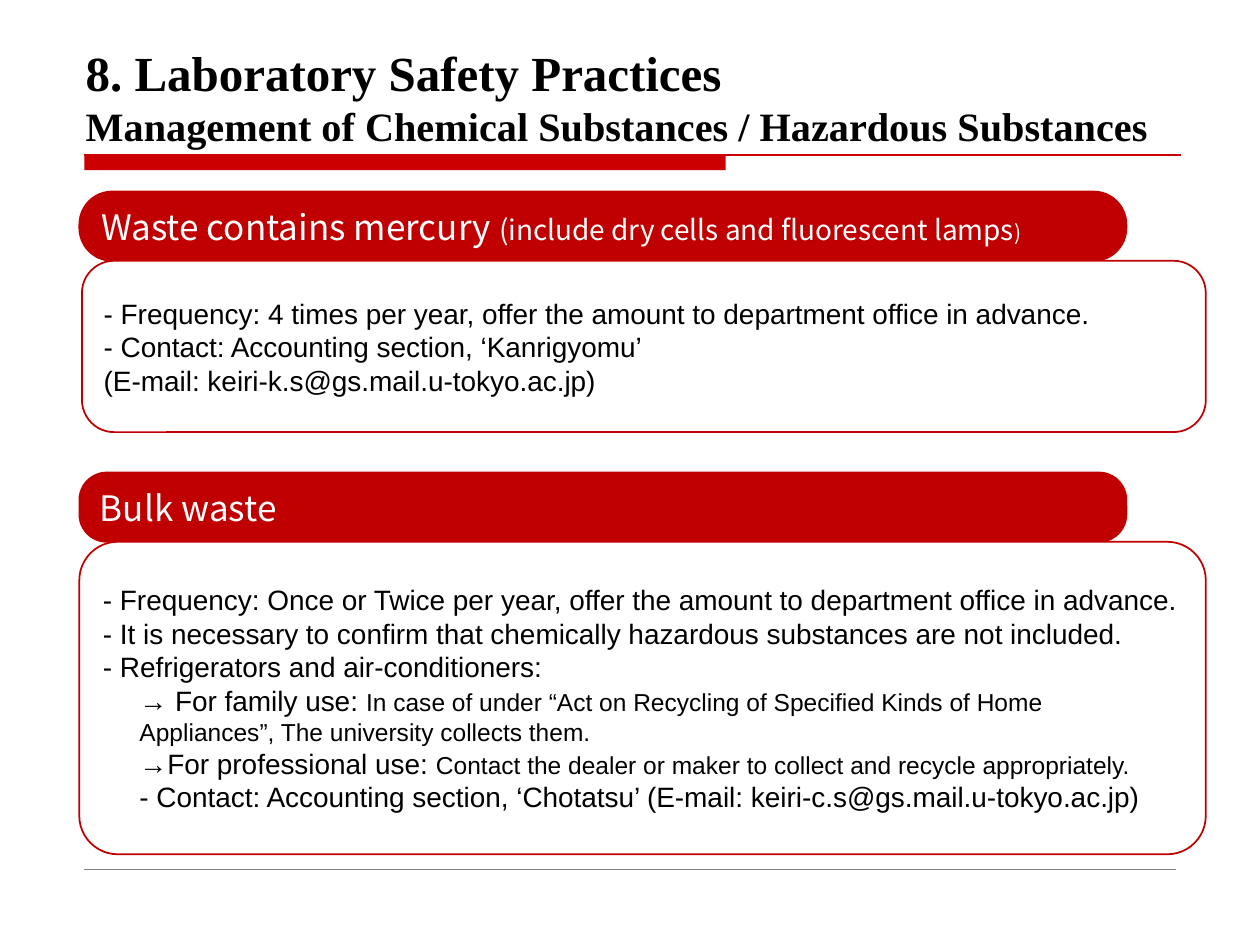
"""Build the slide on mercury waste and bulk waste rules."""
import copy
from dataclasses import dataclass

from lxml import etree
from pptx import Presentation
from pptx import util as u
from pptx.dml.color import RGBColor
from pptx.enum import shapes, text
from pptx.oxml.ns import qn


@dataclass(frozen=True)
class Theme:
    rule: str = "CC0000"
    accent: str = "C00000"
    paper: str = "FFFFFF"
    ink: str = "000000"
    footer: str = "808080"
    title_font: str = "Times New Roman"
    head_font: str = "Noto Sans CJK JP"
    body_font: str = "Arial"
    title: int = 28
    subtitle: int = 23
    head: int = 20
    body: int = 16
    detail: int = 14
    small: int = 12


THEME = Theme()
LEFT, HEAD_WIDTH, HEAD_HEIGHT, RIGHT = 0.63, 8.31, 0.55, 9.57
INDENT = 0.29

TITLE = [(0, [("8. Laboratory Safety Practices\v", THEME.title),
              ("Management of Chemical Substances / Hazardous Substances", THEME.subtitle)])]

SECTIONS = [
    {
        "top": 1.52, "left": 0.65, "height": 1.36, "rounding": (0.473, 0.188),
        "head": [("Waste contains mercury ", THEME.head),
                 ("(include dry cells and fluorescent lamps", THEME.body),
                 (")", THEME.small)],
        "body": [
            (0, [("- Frequency: 4 times per year, offer the amount to department office in advance.", THEME.body)]),
            (0, [("- Contact: Accounting section, ‘Kanrigyomu’ \v(E-mail: keiri-k.s@gs.mail.u-tokyo.ac.jp)", THEME.body)]),
        ],
    },
    {
        "top": 3.75, "left": LEFT, "height": 2.48, "rounding": (0.396, 0.123),
        "head": [("Bulk waste", THEME.head)],
        "body": [
            (0, [("- Frequency: Once or Twice per year, offer the amount to department office in advance.", THEME.body)]),
            (0, [("- It is necessary to confirm that chemically hazardous substances are not included.", THEME.body)]),
            (0, [("- Refrigerators and air-conditioners:", THEME.body)]),
            (1, [("→ For family use: ", THEME.body),
                 ("In case of under “Act on Recycling of Specified Kinds of Home Appliances”, "
                  "The university collects them.", THEME.detail)]),
            (1, [("→For professional use: ", THEME.body),
                 ("Contact the dealer or maker to collect and recycle appropriately.", THEME.detail)]),
            (1, [("- Contact: Accounting section, ‘Chotatsu’ (E-mail: keiri-c.s@gs.mail.u-tokyo.ac.jp)", THEME.body)]),
        ],
    },
]


def color(code):
    return RGBColor.from_string(code)


def add_span(para, words, size, font, ink, bold):
    for number, part in enumerate(words.split("\v")):
        if number:
            para.add_line_break()
        if not part:
            continue
        span = para.add_run()
        span.text = part
        span.font.size = u.Pt(size)
        span.font.name = font
        span.font.bold = bold
        span.font.color.rgb = color(ink)


def write(frame, paragraphs, font, ink, anchor, bold=False):
    frame.word_wrap = True
    frame.auto_size = text.MSO_AUTO_SIZE.NONE
    frame.vertical_anchor = anchor
    for number, (level, spans) in enumerate(paragraphs):
        para = frame.add_paragraph() if number else frame.paragraphs[0]
        para.alignment = text.PP_ALIGN.LEFT
        if level:
            para._p.get_or_add_pPr().set("marL", str(u.Inches(INDENT * level)))
        for words, size in spans:
            add_span(para, words, size, font, ink, bold)
        for line_break in para._p.findall(qn("a:br")):
            line_break.append(copy.deepcopy(line_break.getprevious().find(qn("a:rPr"))))


def add_box(page, kind, place, fill, line, rounding=None):
    box = page.shapes.add_shape(kind, *map(u.Inches, place))
    box.shadow.inherit = False
    box.fill.solid()
    box.fill.fore_color.rgb = color(fill)
    if line:
        box.line.color.rgb = color(line)
        box.line.width = u.Pt(1)
    else:
        box.line.fill.background()
    if rounding:
        box.adjustments[0] = rounding
    return box


def add_rule(page, left, right, top, ink, width):
    rule = page.shapes.add_connector(
        shapes.MSO_CONNECTOR.STRAIGHT, *map(u.Inches, (left, top, right, top)))
    rule.line.color.rgb = color(ink)
    rule.line.width = u.Pt(width)
    etree.SubElement(rule._element.spPr, qn("a:effectLst"))


def add_section(page, section):
    rounded = shapes.MSO_SHAPE.ROUNDED_RECTANGLE
    top, left = section["top"], section["left"]
    head_rounding, body_rounding = section["rounding"]
    head = add_box(page, rounded, (LEFT, top, HEAD_WIDTH, HEAD_HEIGHT),
                   THEME.accent, THEME.accent, head_rounding)
    write(head.text_frame, [(0, section["head"])], THEME.head_font,
          THEME.paper, text.MSO_ANCHOR.MIDDLE)
    body = add_box(page, rounded,
                   (left, top + HEAD_HEIGHT, RIGHT - left, section["height"]),
                   THEME.paper, THEME.accent, body_rounding)
    write(body.text_frame, section["body"], THEME.body_font,
          THEME.ink, text.MSO_ANCHOR.MIDDLE)


def main():
    deck = Presentation()
    deck.slide_width, deck.slide_height = u.Inches(10), u.Inches(7.5)
    page = deck.slides.add_slide(deck.slide_layouts[5])

    title = page.shapes.title
    title.left, title.top, title.width, title.height = map(u.Inches, (0.58, 0.42, 8.75, 0.82))
    write(title.text_frame, TITLE, THEME.title_font, THEME.ink,
          text.MSO_ANCHOR.BOTTOM, bold=True)

    add_box(page, shapes.MSO_SHAPE.RECTANGLE, (0.67, 1.23, 5.09, 0.12), THEME.rule, None)
    add_rule(page, 0.67, 9.37, 1.23, THEME.rule, 0.75)
    add_rule(page, 0.67, 9.33, 6.9, THEME.footer, 0.25)
    for section in SECTIONS:
        add_section(page, section)
    deck.save("out.pptx")


if __name__ == "__main__":
    main()
